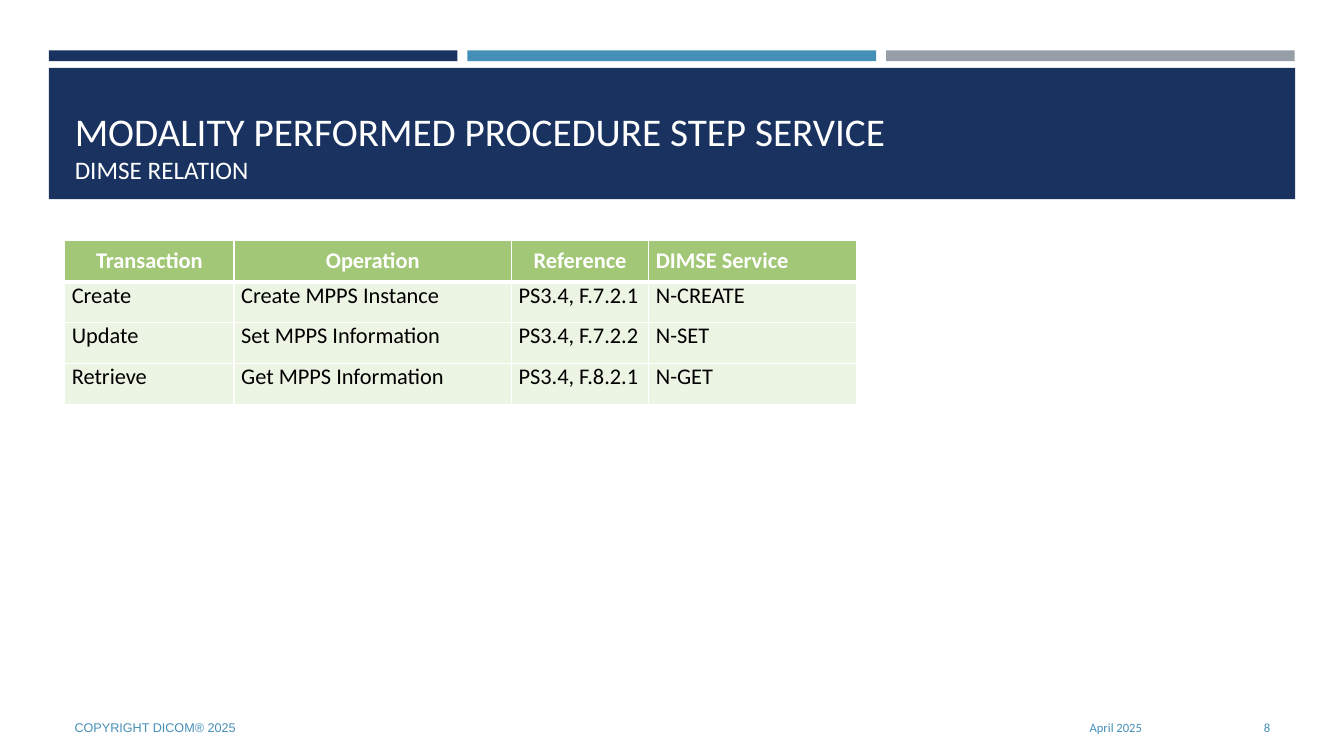
from lxml import etree
from pptx import Presentation
from pptx.dml.color import RGBColor
from pptx.enum.shapes import MSO_SHAPE as Shape
from pptx.enum.text import MSO_ANCHOR as Anchor, MSO_AUTO_SIZE as Fit, PP_ALIGN as Align
from pptx.oxml.ns import qn
from pptx.util import Cm, Pt

NAVY = RGBColor(0x1A, 0x32, 0x60)
BLUE = RGBColor(0x45, 0x90, 0xB8)
GREY = RGBColor(0x96, 0x9F, 0xA7)
GREEN = RGBColor(0xA2, 0xC7, 0x77)
PALE = RGBColor(0xEC, 0xF4, 0xE4)
WHITE = RGBColor(0xFF, 0xFF, 0xFF)
BLACK = RGBColor(0, 0, 0)

# Content
TITLE = [("MODALITY PERFORMED PROCEDURE STEP SERVICE", 28), ("DIMSE RELATION", 18)]
ROWS = [
    ("Transaction", "Operation", "Reference", "DIMSE Service"),
    ("Create", "Create MPPS Instance", "PS3.4, F.7.2.1", "N-CREATE"),
    ("Update", "Set MPPS Information", "PS3.4, F.7.2.2", "N-SET"),
    ("Retrieve", "Get MPPS Information", "PS3.4, F.8.2.1", "N-GET"),
]
WIDTHS = [4.27, 6.99, 3.46, 5.23]
ROW_H = 1.03
LEFT = 1.63  # shared by title, table and footer
FOOTER = [  # text, left, width, alignment, font
    ("COPYRIGHT DICOM® 2025", LEFT, 19.2, Align.LEFT, "Arial"),
    ("April 2025", 21.13, 7.9, Align.RIGHT, "Calibri"),
    ("8", 29.34, 2.92, Align.RIGHT, "Calibri"),
]


def add_run(para, text, size, color, font="Calibri", bold=False):
    run = para.add_run()
    run.text = text
    run.font.size, run.font.name, run.font.bold = Pt(size), font, bold
    run.font.color.rgb = color


def add_bar(slide, left, top, width, height, color):
    bar = slide.shapes.add_shape(Shape.RECTANGLE, Cm(left), Cm(top), Cm(width), Cm(height))
    bar.shadow.inherit = False
    bar.fill.solid()
    bar.fill.fore_color.rgb = color
    bar.line.fill.background()


def set_edges(cell, head):
    props = cell._tc.get_or_add_tcPr()
    widths = {"lnL": 1, "lnR": 1, "lnT": 1, "lnB": 3 if head else 1}
    for spot, (tag, width) in enumerate(widths.items()):
        edge = etree.Element(qn(f"a:{tag}"), w=str(Pt(width)))
        fill = etree.SubElement(edge, qn("a:solidFill"))
        etree.SubElement(fill, qn("a:srgbClr"), val=str(WHITE))
        props.insert(spot, edge)


def add_header(slide):
    # Three equal bars over the title band
    for col, color in enumerate((NAVY, BLUE, GREY)):
        add_bar(slide, 1.23 + col * 10.55, 1.27, 10.3, 0.27, color)
    add_bar(slide, 1.23, 1.71, 31.41, 3.31, NAVY)

    # Title in front of the band
    title = slide.shapes.title
    slide.shapes.element.append(title.element)
    title.left, title.top, title.width, title.height = Cm(LEFT), Cm(1.96), Cm(30.63), Cm(2.82)
    frame = title.text_frame
    frame.word_wrap, frame.auto_size = True, Fit.NONE
    frame.vertical_anchor = Anchor.BOTTOM
    para = frame.paragraphs[0]
    para.alignment = Align.LEFT
    for line, (text, size) in enumerate(TITLE):
        if line:
            para.add_line_break()
        add_run(para, text, size, WHITE)


def add_grid(slide):
    table = slide.shapes.add_table(len(ROWS), len(WIDTHS), Cm(LEFT), Cm(6.07),
                                   Cm(sum(WIDTHS)), Cm(ROW_H * len(ROWS))).table
    for col, width in zip(table.columns, WIDTHS):
        col.width = Cm(width)
    for r, texts in enumerate(ROWS):
        head = r == 0
        table.rows[r].height = Cm(ROW_H)
        for c, text in enumerate(texts):
            cell = table.cell(r, c)
            cell.margin_left = cell.margin_right = Cm(0.18)
            cell.margin_top = cell.margin_bottom = 0
            cell.vertical_anchor = Anchor.MIDDLE if head else Anchor.TOP
            cell.fill.solid()
            cell.fill.fore_color.rgb = GREEN if head else PALE
            set_edges(cell, head)
            para = cell.text_frame.paragraphs[0]
            para.alignment = Align.CENTER if head and c < 3 else Align.LEFT
            add_run(para, text, 16, WHITE if head else BLACK, bold=head)


def add_footer(slide):
    for text, left, width, align, font in FOOTER:
        box = slide.shapes.add_textbox(Cm(left), Cm(17.83), Cm(width), Cm(1.02))
        frame = box.text_frame
        frame.word_wrap = True
        frame.vertical_anchor = Anchor.MIDDLE
        para = frame.paragraphs[0]
        para.alignment = align
        add_run(para, text, 9, BLUE, font)


def main():
    deck = Presentation()
    deck.slide_width, deck.slide_height = Cm(33.87), Cm(19.05)
    slide = deck.slides.add_slide(deck.slide_layouts[5])  # title only
    add_header(slide)
    add_grid(slide)
    add_footer(slide)
    deck.save("out.pptx")


if __name__ == "__main__":
    main()
